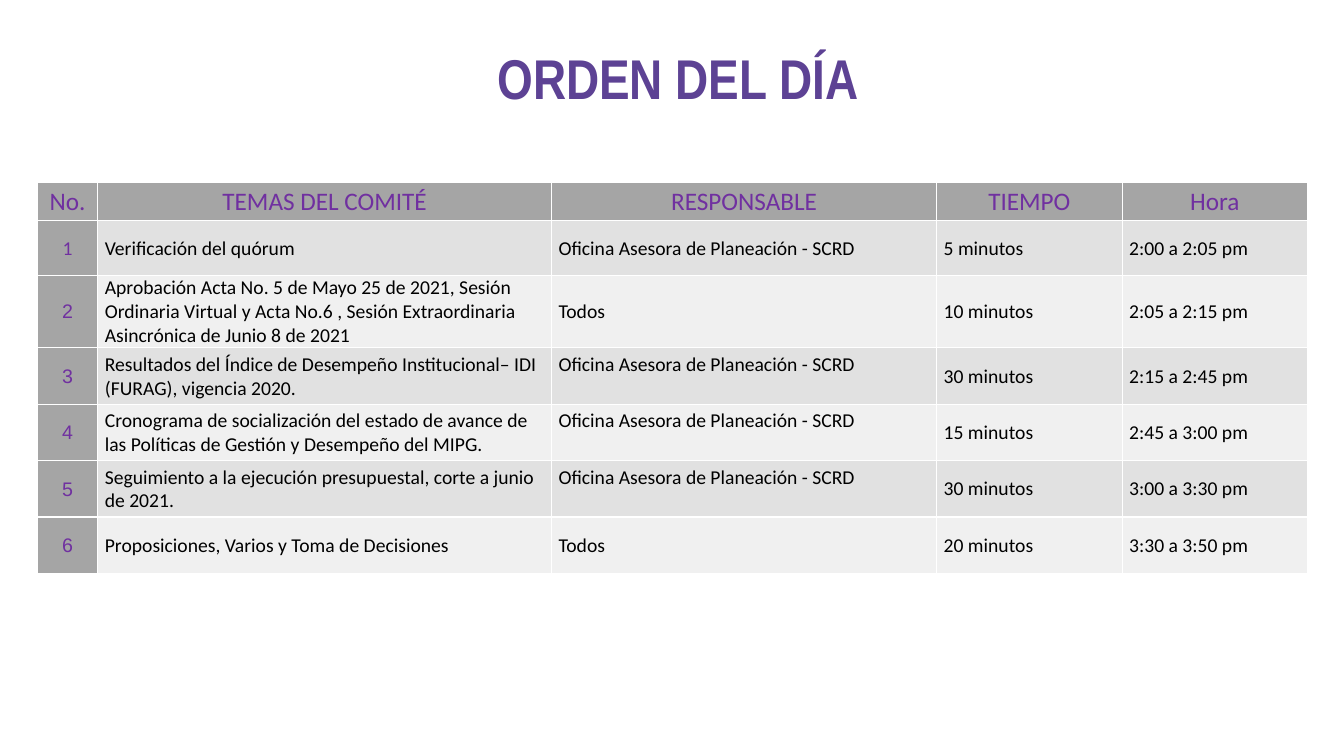
from dataclasses import dataclass

from lxml.etree import SubElement
from pptx import Presentation
from pptx.dml.color import RGBColor
from pptx.enum.text import MSO_ANCHOR as Anchor, PP_ALIGN as Align
from pptx.oxml.ns import qn
from pptx.util import Inches, Pt


@dataclass(frozen=True)
class Theme:
    """Colours, fonts and type sizes of the slide."""
    title: str = "5D4294"
    accent: str = "7030A0"
    body: str = "000000"
    header_fill: str = "A5A5A5"
    bands: tuple = ("E1E1E1", "F0F0F0")
    border: str = "FFFFFF"
    title_font: str = "Arial Narrow"
    number_font: str = "Arial"
    font: str = "Calibri"
    title_size: int = 40
    header_size: int = 18
    body_size: int = 14


THEME = Theme()
PLANNING = "Oficina Asesora de Planeación - SCRD"
HEADERS = ("No.", "TEMAS DEL COMITÉ", "RESPONSABLE", "TIEMPO", "Hora")
AGENDA = (
    ("Verificación del quórum", PLANNING, "5 minutos", "2:00 a 2:05 pm"),
    ("Aprobación Acta No. 5 de Mayo 25 de 2021, Sesión Ordinaria Virtual y Acta No.6 , "
     "Sesión Extraordinaria Asincrónica de Junio 8 de 2021",
     "Todos", "10 minutos", "2:05 a 2:15 pm"),
    ("Resultados del Índice de Desempeño Institucional– IDI (FURAG), vigencia 2020.",
     PLANNING, "30 minutos", "2:15 a 2:45 pm"),
    ("Cronograma de socialización del estado de avance de las Políticas de Gestión "
     "y Desempeño del MIPG.", PLANNING, "15 minutos", "2:45 a 3:00 pm"),
    ("Seguimiento a la ejecución presupuestal, corte a junio de 2021.",
     PLANNING, "30 minutos", "3:00 a 3:30 pm"),
    ("Proposiciones, Varios y Toma de Decisiones", "Todos", "20 minutos", "3:30 a 3:50 pm"),
)
COLUMN_WIDTHS = (0.6, 4.5, 3.82, 1.84, 1.84)
ROW_HEIGHTS = (0.38, 0.54, 0.72) + (0.56,) * 4
RAISED_ROWS = (3, 4, 5)


def write(tf, text, *, size, color, font=THEME.font, bold=False, align=Align.LEFT, spacing=None):
    """Write one formatted paragraph into a text frame."""
    p = tf.paragraphs[0]
    p.alignment = align
    p.line_spacing = spacing
    r = p.add_run()
    r.text = text
    r.font.name = font
    r.font.size = Pt(size)
    r.font.bold = bold
    r.font.color.rgb = RGBColor.from_string(color)


def add_title(slide, text):
    """Add the centred slide title."""
    sp = slide.shapes.add_textbox(Inches(1.65), Inches(0.43), Inches(10.15), Inches(0.63))
    tf = sp.text_frame
    tf.word_wrap = True
    tf.vertical_anchor = Anchor.MIDDLE
    write(tf, text, size=THEME.title_size, color=THEME.title, font=THEME.title_font,
          bold=True, align=Align.CENTER, spacing=1.07)


def set_borders(cell, color, width=1):
    """Draw a solid line on the four sides of a cell."""
    tc_pr = cell._tc.get_or_add_tcPr()
    for index, side in enumerate(("a:lnL", "a:lnR", "a:lnT", "a:lnB")):
        ln = SubElement(tc_pr, qn(side), w=str(Pt(width)))
        SubElement(SubElement(ln, qn("a:solidFill")), qn("a:srgbClr"), val=color)
        tc_pr.insert(index, ln)


def format_cell(cell, fill, raised=False):
    """Set the fill, borders, margins and anchor of a cell."""
    cell.fill.solid()
    cell.fill.fore_color.rgb = RGBColor.from_string(fill)
    set_borders(cell, THEME.border)
    cell.margin_left = cell.margin_right = Inches(0.07)
    cell.margin_top = Inches(0.05 if raised else 0.01)
    cell.margin_bottom = 0
    cell.vertical_anchor = Anchor.TOP if raised else Anchor.MIDDLE


def add_agenda(slide):
    """Add the agenda table with its header row and numbered first column."""
    table = slide.shapes.add_table(
        len(ROW_HEIGHTS), len(COLUMN_WIDTHS), Inches(0.37), Inches(1.81),
        Inches(sum(COLUMN_WIDTHS)), Inches(sum(ROW_HEIGHTS))).table
    for column, width in zip(table.columns, COLUMN_WIDTHS):
        column.width = Inches(width)
    for row, height in zip(table.rows, ROW_HEIGHTS):
        row.height = Inches(height)

    rows = [HEADERS] + [(str(n), *item) for n, item in enumerate(AGENDA, 1)]
    for i, values in enumerate(rows):
        for j, text in enumerate(values):
            cell = table.cell(i, j)
            heading = i == 0 or j == 0
            fill = THEME.header_fill if heading else THEME.bands[(i - 1) % 2]
            format_cell(cell, fill, raised=j == 2 and i in RAISED_ROWS)
            write(cell.text_frame, text,
                  size=THEME.body_size if i else THEME.header_size,
                  color=THEME.accent if heading else THEME.body,
                  font=THEME.number_font if j == 0 and i > 1 else THEME.font,
                  align=Align.CENTER if heading else Align.LEFT)


def main():
    """Build the agenda slide and save it."""
    prs = Presentation()
    prs.slide_width, prs.slide_height = Inches(13.33), Inches(7.5)
    slide = prs.slides.add_slide(prs.slide_layouts[6])
    add_title(slide, "ORDEN DEL DÍA")
    add_agenda(slide)
    prs.save("out.pptx")


if __name__ == "__main__":
    main()
